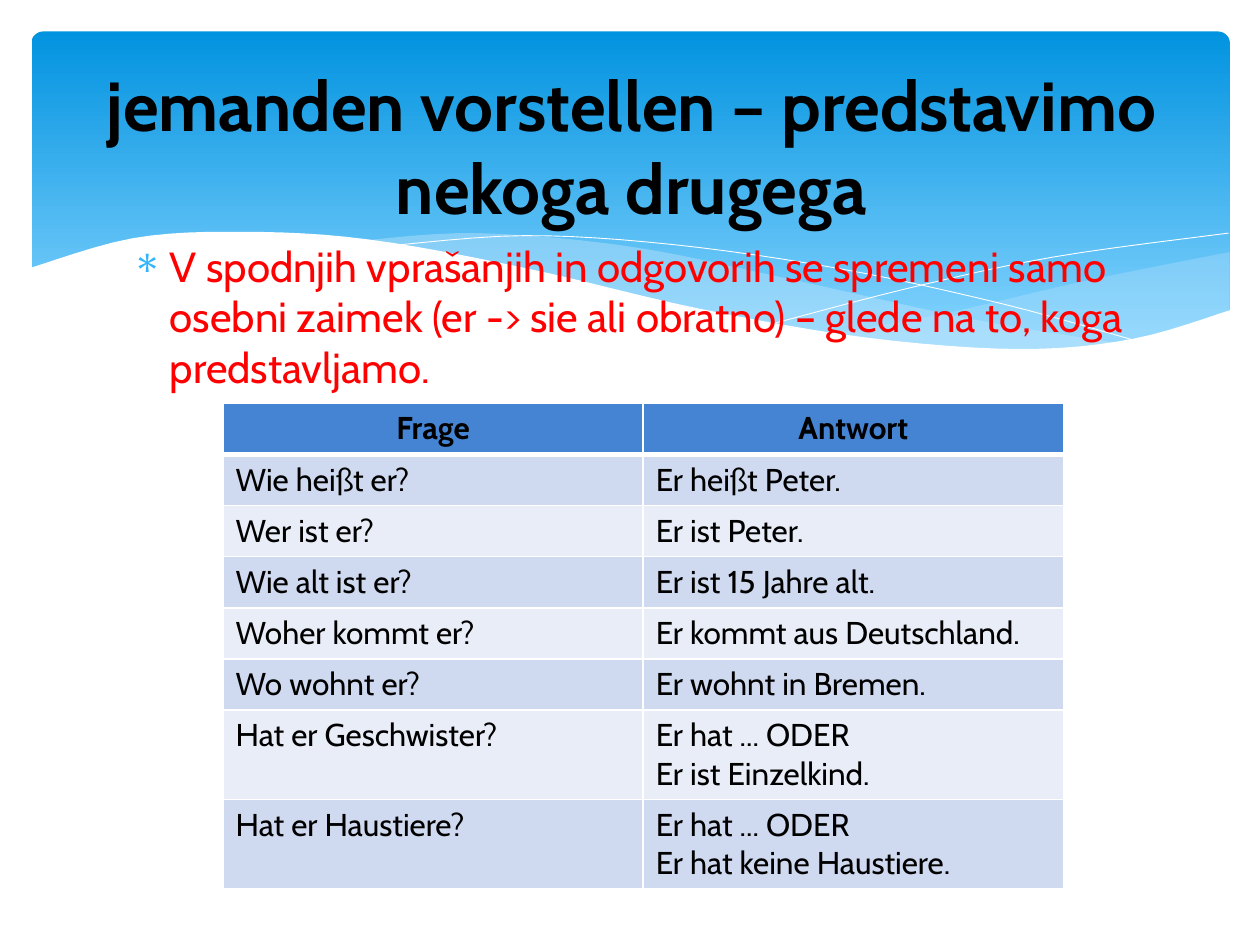
from lxml import etree
from pptx import Presentation
from pptx import util as u
from pptx.dml.color import RGBColor
from pptx.enum import shapes, text
from pptx.oxml import parse_xml
from pptx.oxml.ns import nsdecls, qn

SKY_TOP = RGBColor(0x02, 0x93, 0xE0)
SKY_BOTTOM = RGBColor(0x83, 0xD3, 0xFE)
WAVE = RGBColor(0xC6, 0xE7, 0xFC)
BULLET = RGBColor(0x31, 0xB6, 0xFD)
WHITE = RGBColor(0xFF, 0xFF, 0xFF)
BLACK = RGBColor(0, 0, 0)
RED = RGBColor(0xFF, 0, 0)
HEADER = RGBColor(0x45, 0x84, 0xD3)
BANDS = [RGBColor(0xCF, 0xD9, 0xEF), RGBColor(0xE9, 0xED, 0xF7)]
FONT = "Cabin"
CURVE_STEPS = 6
LEFT, CENTER = text.PP_ALIGN.LEFT, text.PP_ALIGN.CENTER


def add_wave(*edges, color=None, opacity=100):
    outline = []
    for edge in edges:
        knots = [edge[0], *edge, edge[-1]]
        for before, start, end, after in zip(knots, knots[1:], knots[2:], knots[3:]):
            for step in range(CURVE_STEPS):
                t = step / CURVE_STEPS
                outline.append([
                    u.Inches(b + (c - a) * t / 2
                             + (2 * a - 5 * b + 4 * c - d) * t ** 2 / 2
                             + (3 * b - a - 3 * c + d) * t ** 3 / 2)
                    for a, b, c, d in zip(before, start, end, after)])
        outline.append([u.Inches(value) for value in edge[-1]])
    builder = slide.shapes.build_freeform(*outline[0])
    builder.add_line_segments(outline[1:], close=color is not None)
    wave = builder.convert_to_shape()
    wave.shadow.inherit = False
    if color is None:
        wave.fill.background()
        wave.line.color.rgb = WHITE
        wave.line.width = u.Pt(0.5)
    else:
        wave.fill.solid()
        wave.fill.fore_color.rgb = color
        wave.line.fill.background()
        tint = wave._element.spPr.find(qn("a:solidFill"))[0]
        etree.SubElement(tint, qn("a:alpha"), val=str(opacity * 1000))


def style(paragraph, size, color, bold=False, align=LEFT):
    paragraph.alignment = align
    paragraph.font.name = FONT
    paragraph.font.size = u.Pt(size)
    paragraph.font.bold = bold
    paragraph.font.color.rgb = color


prs = Presentation()
prs.slide_width, prs.slide_height = u.Inches(10), u.Inches(7.5)
slide = prs.slides.add_slide(prs.slide_layouts[5])

sky = slide.shapes.add_shape(
    shapes.MSO_SHAPE.ROUNDED_RECTANGLE,
    u.Inches(0.25), u.Inches(0.25), u.Inches(9.51), u.Inches(2.7))
sky.adjustments[0] = 0.034
sky.shadow.inherit = False
sky.line.fill.background()
sky.fill.gradient()
sky.fill.gradient_angle = 270
for stop, color, position in zip(
        sky.fill.gradient_stops, (SKY_TOP, SKY_BOTTOM), (0, 0.9)):
    stop.color.rgb = color
    stop.position = position

right_swell_top = [(9.76, 2), (8.61, 2.23), (7.53, 2.48), (6.61, 2.65)]
right_swell_bottom = [(6.61, 2.65), (7.32, 2.74), (8.03, 2.78), (8.89, 2.72), (9.76, 2.47)]
add_wave(right_swell_top, right_swell_bottom, color=WAVE, opacity=29)

middle_swell_top = [(8.93, 2.73), (7.75, 2.54), (6.29, 2.22),
                    (5.02, 1.96), (3.8, 1.85), (2.86, 1.91)]
middle_swell_bottom = [(2.86, 1.91), (4.49, 2.22), (6.01, 2.55),
                       (7.22, 2.74), (8.18, 2.78), (8.93, 2.73)]
add_wave(middle_swell_top, middle_swell_bottom, color=WAVE, opacity=40)

falling_line = [(3.09, 1.95), (4.16, 1.87), (5.33, 1.94), (6.65, 2.13), (7.95, 2.41), (9.07, 2.72)]
rising_line = [(6.13, 2.57), (7.2, 2.29), (8.36, 2.04), (9.75, 1.85)]
for crest_line in (falling_line, rising_line):
    add_wave(crest_line)

front_crest = [(9.77, 2.46), (8.99, 2.69), (8.09, 2.77), (6.88, 2.68), (5.55, 2.45),
               (4.18, 2.13), (2.92, 1.9), (1.93, 1.84), (1.06, 1.89), (0.23, 2.13)]
front_base = [(0.23, 3.29), (9.77, 3.29)]
add_wave(front_crest, front_base, color=WHITE)

intro = slide.shapes.add_textbox(
    u.Inches(0.95), u.Inches(1.86), u.Inches(8.1), u.Inches(4.84))
intro.text_frame.word_wrap = True
rule = intro.text_frame.paragraphs[0]
rule.text = ("V spodnjih vprašanjih in odgovorih se spremeni samo osebni zaimek "
             "(er -> sie ali obratno) – glede na to, koga predstavljamo.")
bullet = rule._p.get_or_add_pPr()
bullet.set("marL", str(u.Inches(0.3)))
bullet.set("indent", str(u.Inches(-0.3)))
bullet_color = etree.SubElement(bullet, qn("a:buClr"))
etree.SubElement(bullet_color, qn("a:srgbClr"), val=str(BULLET))
etree.SubElement(bullet, qn("a:buFont"), typeface="Symbol")
etree.SubElement(bullet, qn("a:buChar"), char="∗")
style(rule, 24, RED)
rule.space_before = u.Pt(4.8)

title = slide.shapes.title
title.left, title.top = u.Inches(0.51), u.Inches(0.21)
title.width, title.height = u.Inches(9), u.Inches(1.88)
title.text_frame.text = "jemanden vorstellen – predstavimo nekoga drugega"
title.text_frame.auto_size = text.MSO_AUTO_SIZE.NONE
title.text_frame.vertical_anchor = text.MSO_ANCHOR.MIDDLE
style(title.text_frame.paragraphs[0], 39.6, BLACK, True, CENTER)
slide.shapes._spTree.append(title._element)

dialogue = [
    ("Frage", "Antwort"),
    ("Wie heißt er?", "Er heißt Peter."),
    ("Wer ist er?", "Er ist Peter."),
    ("Wie alt ist er?", "Er ist 15 Jahre alt."),
    ("Woher kommt er?", "Er kommt aus Deutschland."),
    ("Wo wohnt er?", "Er wohnt in Bremen."),
    ("Hat er Geschwister?", "Er hat ... ODER\nEr ist Einzelkind."),
    ("Hat er Haustiere?", "Er hat ... ODER\nEr hat keine Haustiere."),
]
table = slide.shapes.add_table(
    len(dialogue), 2, u.Inches(1.77), u.Inches(3.2),
    u.Inches(6.67), u.Inches(3.25)).table
for row, phrases in enumerate(dialogue):
    is_header = row == 0
    for col, phrase in enumerate(phrases):
        cell = table.cell(row, col)
        cell.text = phrase
        for line in cell.text_frame.paragraphs:
            style(line, 18, BLACK, is_header, CENTER if is_header else LEFT)
        cell.fill.solid()
        cell.fill.fore_color.rgb = HEADER if is_header else BANDS[(row - 1) % 2]
        borders = cell._tc.get_or_add_tcPr()
        for place, side in enumerate("LRTB"):
            below_header = (row, side) in ((0, "B"), (1, "T"))
            borders.insert(place, parse_xml(
                f'<a:ln{side} {nsdecls("a")} w="{u.Pt(3 if below_header else 1)}">'
                f'<a:solidFill><a:srgbClr val="{WHITE}"/></a:solidFill></a:ln{side}>'))

prs.save("out.pptx")
